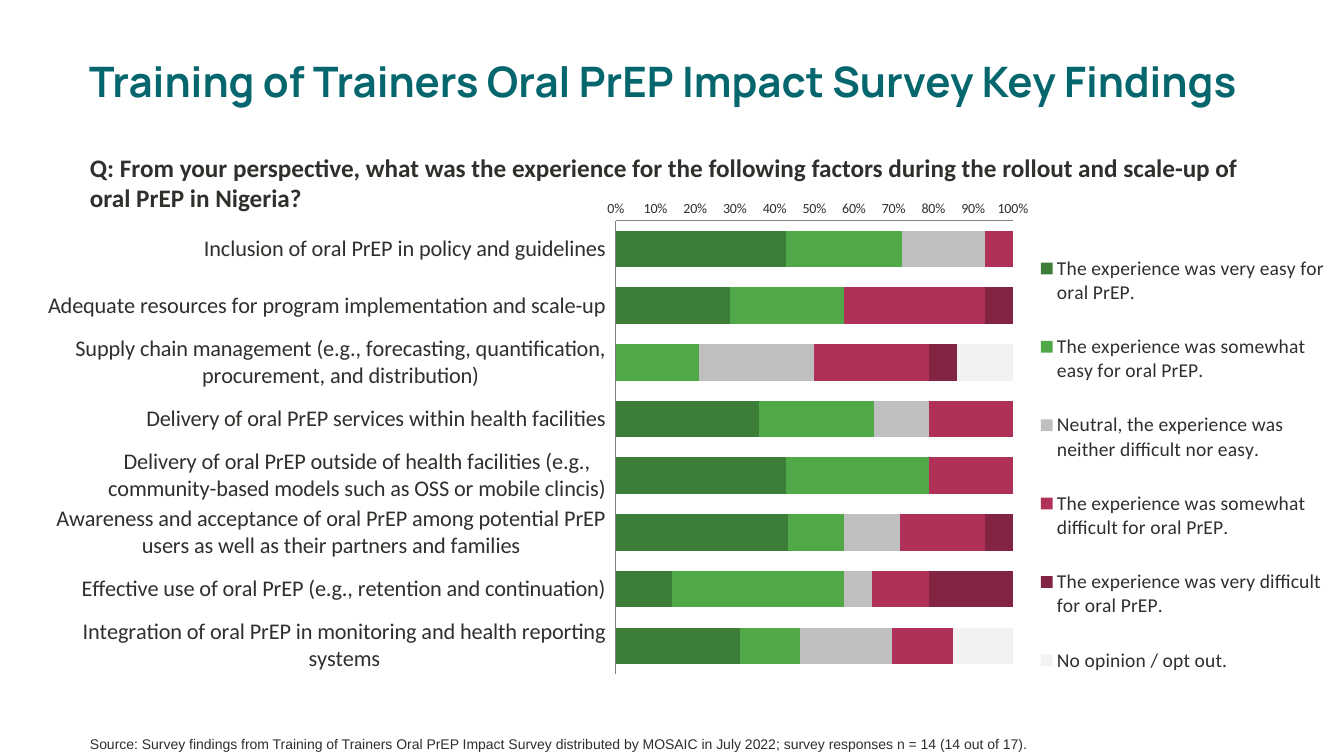
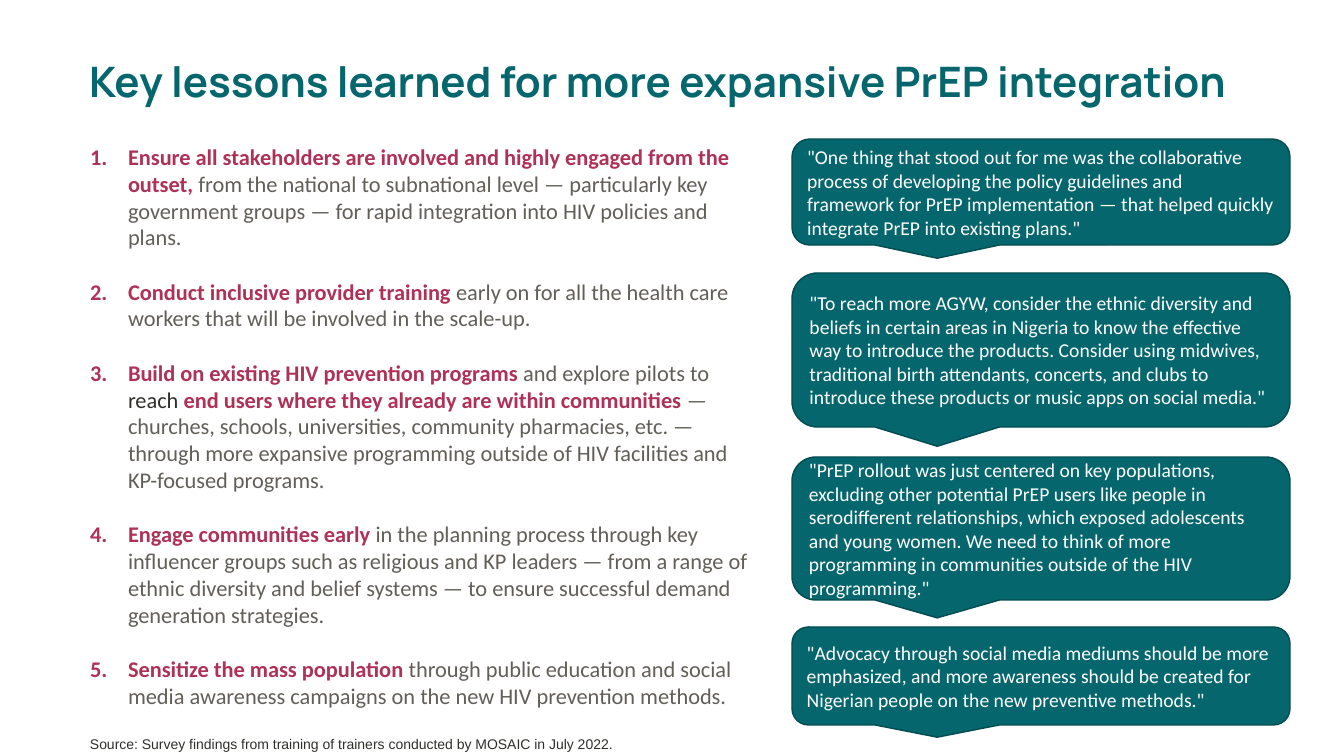
from lxml import etree
from pptx import Presentation
from pptx.chart.data import CategoryChartData
from pptx.dml.color import RGBColor
from pptx.enum.chart import (XL_AXIS_CROSSES, XL_CHART_TYPE, XL_LEGEND_POSITION,
                             XL_TICK_LABEL_POSITION, XL_TICK_MARK)
from pptx.enum.shapes import MSO_SHAPE
from pptx.enum.text import MSO_ANCHOR, MSO_AUTO_SIZE, PP_ALIGN
from pptx.oxml.ns import qn
from pptx.util import Emu, Pt

STACKED_BARS = XL_CHART_TYPE.BAR_STACKED_100
CROSS_MAXIMUM = XL_AXIS_CROSSES.MAXIMUM
LEGEND_RIGHT = XL_LEGEND_POSITION.RIGHT
LABELS_LOW = XL_TICK_LABEL_POSITION.LOW
NO_TICK = XL_TICK_MARK.NONE
CALLOUT = MSO_SHAPE.ROUNDED_RECTANGULAR_CALLOUT
MIDDLE, TOP = MSO_ANCHOR.MIDDLE, MSO_ANCHOR.TOP
NO_AUTO_SIZE = MSO_AUTO_SIZE.NONE
LEFT = PP_ALIGN.LEFT

PIXELS_PER_INCH = 100.8
TEAL, DARK_TEAL, WHITE = "05676D", "044C51", "FFFFFF"
CRIMSON, INK, GREY, AXIS_GREY = "AF3158", "312F2C", "625E58", "7F7F7F"

TITLE_FONT = {"name": "Manrope", "size": Pt(30), "bold": True, "color": TEAL}
QUESTION_FONT = {"name": "Calibri", "size": Pt(18), "bold": True, "color": INK}
SOURCE_FONT = {"name": "Arial", "size": Pt(10), "color": INK}
QUOTE_FONT = {"name": "Calibri", "size": Pt(14), "color": WHITE}
CHART_FONT = {"name": "Calibri", "size": Pt(18), "color": GREY}
LESSON_FONTS = {
    "key": {"name": "Calibri", "size": Pt(16), "bold": True, "color": CRIMSON},
    "plain": {"name": "Calibri", "size": Pt(16), "bold": False, "color": GREY},
    "dark": {"name": "Calibri", "size": Pt(16), "bold": False, "color": INK},
}

FACTORS = [
    "Inclusion of oral PrEP in policy and guidelines",
    "Adequate resources for program implementation and scale-up",
    "Supply chain management (e.g., forecasting, quantification, procurement, and distribution)",
    "Delivery of oral PrEP services within health facilities",
    "Delivery of oral PrEP outside of health facilities (e.g., community-based models "
    "such as OSS or mobile clincis)",
    "Awareness and acceptance of oral PrEP among potential PrEP users as well as "
    "their partners and families",
    "Effective use of oral PrEP (e.g., retention and continuation)",
    "Integration of oral PrEP in monitoring and health reporting systems",
]
RATINGS = [
    ("The experience was very easy for oral PrEP.", "3C7E37", (43, 29, 0, 36, 43, 43, 14, 31)),
    ("The experience was somewhat easy for oral PrEP.", "50A849",
     (29, 29, 21, 29, 36, 14, 43, 15)),
    ("Neutral, the experience was neither difficult nor easy.", "BFBFBF",
     (21, 0, 29, 14, 0, 14, 7, 23)),
    ("The experience was somewhat difficult for oral PrEP.", CRIMSON,
     (7, 36, 29, 21, 21, 21, 14, 15)),
    ("The experience was very difficult for oral PrEP.", "832542", (0, 7, 7, 0, 0, 7, 21, 0)),
    ("No opinion / opt out.", "F2F2F2", (0, 0, 14, 0, 0, 0, 0, 15)),
]
LESSONS = [
    [("key", "Ensure all stakeholders are involved and highly engaged from the outset, "),
     ("plain", "from the national to subnational level — particularly key government groups "
               "— for rapid integration into HIV policies and plans.")],
    [("key", "Conduct inclusive provider training "),
     ("plain", "early on for all the health care workers that will be involved in the scale-up.")],
    [("key", "Build on existing HIV prevention programs "),
     ("plain", "and explore pilots to "),
     ("dark", "reach "),
     ("key", "end users where they already are within communities"),
     ("plain", " — churches, schools, universities, community pharmacies, etc. —through more "
               "expansive programming outside of HIV facilities and KP-focused programs.")],
    [("key", "Engage communities early "),
     ("plain", "in the planning process through key influencer groups such as religious and KP "
               "leaders — from a range of ethnic diversity and belief systems — to ensure "
               "successful demand generation strategies.")],
    [("key", "Sensitize the mass population"),
     ("plain", " through public education and social media awareness campaigns on the new "
               "HIV prevention methods.")],
]
QUOTES = [
    (139, 106, '"One thing that stood out for me was the collaborative process of developing '
               'the policy guidelines and framework for PrEP implementation — that helped '
               'quickly integrate PrEP into existing plans."'),
    (273, 154, '"To reach more AGYW, consider the ethnic diversity and beliefs in certain areas '
               'in Nigeria to know the effective way to introduce the products. Consider using '
               'midwives, traditional birth attendants, concerts, and clubs to introduce these '
               'products or music apps on social media."'),
    (457, 143, '"PrEP rollout was just centered on key populations, excluding other potential '
               'PrEP users like people in serodifferent relationships, which exposed adolescents '
               'and young women. We need to think of more programming in communities outside of '
               'the HIV programming."'),
    (627, 98, '"Advocacy through social media mediums should be more emphasized, and more '
              'awareness should be created for Nigerian people on the new preventive methods."'),
]


def px(length):
    """Turn whole pixels into EMU."""
    return Emu(round(length * 914400 / PIXELS_PER_INCH))


def colour(value):
    """Turn a hex string into a colour."""
    return RGBColor.from_string(value)


def set_values(target, values):
    """Set attributes of an object from a dict."""
    for name, value in values.items():
        setattr(target, name, value)


def set_font(font, values):
    """Format a font from a dict that may hold a colour."""
    for name, value in values.items():
        if name == "color":
            font.color.rgb = colour(value)
        else:
            setattr(font, name, value)


def set_layout(parent, position, values, inner=False):
    """Give a chart part a manual layout in fractions of the chart."""
    for old_layout in parent.findall(qn("c:layout")):
        parent.remove(old_layout)
    layout = etree.Element(qn("c:layout"))
    manual = etree.SubElement(layout, qn("c:manualLayout"))
    entries = [("layoutTarget", "inner")] if inner else []
    entries += [("xMode", "edge"), ("yMode", "edge")]
    entries += zip("xywh", values)
    for name, value in entries:
        etree.SubElement(manual, qn("c:" + name)).set("val", str(value))
    parent.insert(position, layout)


class Deck:
    """Hold the shared style and the current slide."""

    def __init__(self):
        """Start an empty presentation."""
        self.presentation = Presentation()
        set_values(self.presentation, {"slide_width": px(1344), "slide_height": px(756)})
        self.slide = None

    def add_slide(self, title, width):
        """Add a slide and format its title placeholder."""
        self.slide = self.presentation.slides.add_slide(self.presentation.slide_layouts[5])
        shape = self.slide.shapes.title
        set_values(shape, {"left": 0, "top": px(21), "width": px(width), "height": px(126)})
        self.fill_text(shape.text_frame, [[(TITLE_FONT, title)]], MIDDLE, (89, 5, 10, 5))
        shape.text_frame.paragraphs[0].line_spacing = 0.9

    def fill_text(self, frame, paragraphs, anchor=TOP, insets=(10, 5, 10, 5)):
        """Fill a text frame with paragraphs of formatted runs."""
        sides = ("margin_left", "margin_top", "margin_right", "margin_bottom")
        set_values(frame, dict(zip(sides, map(px, insets))))
        set_values(frame, {"word_wrap": True, "auto_size": NO_AUTO_SIZE,
                           "vertical_anchor": anchor})
        for index, runs in enumerate(paragraphs):
            paragraph = frame.add_paragraph() if index else frame.paragraphs[0]
            paragraph.alignment = LEFT
            for values, text in runs:
                run = paragraph.add_run()
                run.text = text
                set_font(run.font, values)

    def add_text(self, box, paragraphs, insets=(10, 5, 10, 5)):
        """Add a text box and return its paragraphs."""
        frame = self.slide.shapes.add_textbox(*map(px, box)).text_frame
        self.fill_text(frame, paragraphs, insets=insets)
        return frame.paragraphs

    def add_source(self, text, width):
        """Add the source line at the foot of the slide."""
        self.add_text((80, 725, width, 31), [[(SOURCE_FONT, text)]], (10, 10, 10, 0))

    def add_numbered_list(self, box, items):
        """Add a numbered list with one line of space between items."""
        runs = [[(LESSON_FONTS[kind], text) for kind, text in item] for item in items]
        for index, paragraph in enumerate(self.add_text(box, runs)):
            if index:
                paragraph.space_before = Pt(19.5)
            properties = paragraph._p.get_or_add_pPr()
            properties.set("marL", str(px(38)))
            properties.set("indent", str(px(-38)))
            etree.SubElement(properties, qn("a:buFont")).set("typeface", "+mj-lt")
            etree.SubElement(properties, qn("a:buAutoNum")).set("type", "arabicPeriod")

    def add_quote(self, box, text):
        """Add a speech callout."""
        shape = self.slide.shapes.add_shape(CALLOUT, *map(px, box))
        shape.shadow.inherit = False
        shape.fill.solid()
        shape.fill.fore_color.rgb = colour(TEAL)
        shape.line.color.rgb = colour(DARK_TEAL)
        shape.line.width = Pt(1)
        self.fill_text(shape.text_frame, [[(QUOTE_FONT, text)]], MIDDLE)

    def add_stacked_bars(self, box, categories, ratings):
        """Add a stacked bar chart with its legend at the right."""
        data = CategoryChartData()
        data.categories = categories
        for name, _, values in ratings:
            data.add_series(name, values)
        chart = self.slide.shapes.add_chart(STACKED_BARS, *map(px, box), data).chart
        set_values(chart, {"has_title": False, "has_legend": True})
        set_font(chart.font, CHART_FONT)
        plot = chart.plots[0]
        set_values(plot, {"gap_width": 55, "overlap": 100, "vary_by_categories": False})
        for series, (_, fill, _) in zip(plot.series, ratings):
            series.format.fill.solid()
            series.format.fill.fore_color.rgb = colour(fill)
        set_values(chart.category_axis, {"reverse_order": True, "crosses": CROSS_MAXIMUM,
                                         "tick_label_position": LABELS_LOW})
        set_values(chart.value_axis, {"minimum_scale": 0, "maximum_scale": 1,
                                      "major_unit": 0.1})
        set_values(chart.value_axis.tick_labels, {"number_format": "0%",
                                                  "number_format_is_linked": False})
        for axis, size in ((chart.category_axis, 16), (chart.value_axis, 10)):
            set_values(axis, {"has_major_gridlines": False, "major_tick_mark": NO_TICK,
                              "minor_tick_mark": NO_TICK})
            set_font(axis.tick_labels.font, CHART_FONT | {"size": Pt(size), "color": INK})
            axis.format.line.color.rgb = colour(AXIS_GREY)
            axis.format.line.width = Pt(0.75)
        set_values(chart.legend, {"position": LEGEND_RIGHT, "include_in_layout": False})
        set_font(chart.legend.font, CHART_FONT | {"size": Pt(14), "color": INK})
        set_layout(chart._chartSpace.chart.plotArea, 0, (0.44, 0.13, 0.31, 0.8), True)
        set_layout(chart.legend._element, 1, (0.77, 0.14, 0.23, 0.84))


def main():
    """Build both slides and save them."""
    deck = Deck()

    deck.add_slide("Training of Trainers Oral PrEP Impact Survey Key Findings", 1334)
    deck.add_stacked_bars((48, 147, 1285, 567), FACTORS, RATINGS)
    question = ("Q: From your perspective, what was the experience for the following factors "
                "during the rollout and scale-up of oral PrEP in Nigeria?")
    deck.add_text((80, 147, 1188, 72), [[(QUESTION_FONT, question)]])
    deck.add_source("Source: Survey findings from Training of Trainers Oral PrEP Impact Survey "
                    "distributed by MOSAIC in July 2022; survey responses n = 14 "
                    "(14 out of 17).", 1188)

    deck.add_slide("Key lessons learned for more expansive PrEP integration", 1317)
    deck.add_numbered_list((80, 138, 687, 581), LESSONS)
    for top, height, text in QUOTES:
        deck.add_quote((792, top, 498, height), text)
    deck.add_source("Source: Survey findings from training of trainers conducted by MOSAIC "
                    "in July 2022.", 654)

    deck.presentation.save("out.pptx")


if __name__ == "__main__":
    main()
